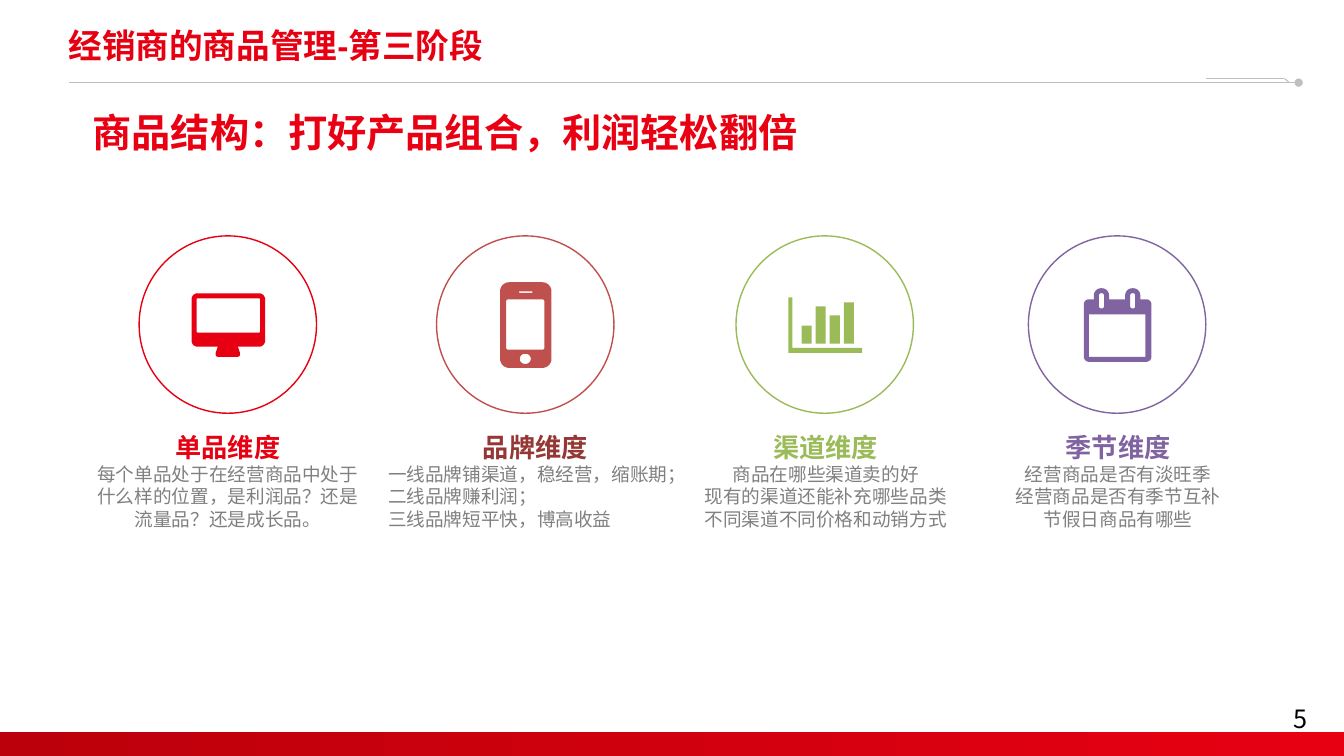
from math import hypot
from lxml.etree import SubElement
from pptx import Presentation
from pptx.dml.color import RGBColor
from pptx.enum.shapes import MSO_CONNECTOR, MSO_SHAPE
from pptx.enum.text import MSO_ANCHOR, PP_ALIGN
from pptx.oxml.ns import qn
from pptx.util import Inches, Pt

COLORS = {
    "red": "E60012", "dark_red": "BC000B", "headline": "E90012",
    "brick": "C0504D", "maroon": "953735", "green": "9BBB59",
    "purple": "8064A2", "gray": "808080", "rule": "BFBFBF",
    "white": "FFFFFF", "black": "000000",
}
RGB = {name: RGBColor.from_string(value) for name, value in COLORS.items()}
CJK = "Noto Sans CJK SC"


def add_text(box, lines, wrap=True):
    sp = s.shapes.add_textbox(*[Inches(v) for v in box])
    tf = sp.text_frame
    tf.word_wrap = wrap
    for i, (text, size, color, bold, align, font) in enumerate(lines):
        p = tf.paragraphs[0] if i == 0 else tf.add_paragraph()
        p.text = text
        p.alignment = align
        p.font.size = Pt(size)
        p.font.bold = bold
        p.font.color.rgb = RGB[color]
        p.font.name = font
        latin = next(p._p.iter(qn("a:latin")))
        SubElement(latin.getparent(), qn("a:ea"), typeface=CJK)
    return sp


def outline(corners):
    points = []
    for i, (x, y, radius) in enumerate(corners):
        if radius == 0:
            points.append((Inches(x), Inches(y)))
            continue
        ends = []
        for nx, ny, _ in (corners[i - 1], corners[(i + 1) % len(corners)]):
            k = radius / hypot(nx - x, ny - y)
            ends.append((x + (nx - x) * k, y + (ny - y) * k))
        (ax, ay), (bx, by) = ends
        for step in range(9):
            t = step / 8
            u = 1 - t
            a = u ** 3 + 1.35 * u * u * t
            b = t ** 3 + 1.35 * u * t * t
            c = 1 - a - b
            points.append((Inches(a * ax + b * bx + c * x),
                           Inches(a * ay + b * by + c * y)))
    return points


prs = Presentation()
prs.slide_width = Inches(13.33)
prs.slide_height = Inches(7.5)
s = prs.slides.add_slide(prs.slide_layouts[6])

bar = s.shapes.add_shape(MSO_SHAPE.RECTANGLE, 0, Inches(7.26), Inches(13.33), Inches(0.24))
bar.shadow.inherit = False
bar.line.fill.background()
bar.fill.gradient()
bar.fill.gradient_angle = 0
for stop, color, position in zip(bar.fill.gradient_stops, ("dark_red", "red"), (0, 1)):
    stop.color.rgb = RGB[color]
    stop.position = position

for x1, y1, x2, y2 in [(0.68, 0.82, 12.88, 0.82), (11.96, 0.78, 12.74, 0.78),
                       (12.74, 0.78, 12.78, 0.81)]:
    rule = s.shapes.add_connector(MSO_CONNECTOR.STRAIGHT, Inches(x1), Inches(y1),
                                  Inches(x2), Inches(y2))
    rule.line.color.rgb = RGB["rule"]
    rule.line.width = Pt(0.75)
    if x1 == 0.68:
        SubElement(rule.line._get_or_add_ln(), qn("a:tailEnd"), type="oval")
    SubElement(rule._element.spPr, qn("a:effectLst"))

title = add_text((0.68, 0.22, 10.08, 0.5),
                 [("经销商的商品管理-第三阶段", 24, "red", True, PP_ALIGN.LEFT, "Arial")], False)
title.text_frame.margin_left = 0
title.text_frame.vertical_anchor = MSO_ANCHOR.MIDDLE
title.text_frame.paragraphs[0].line_spacing = 0.9

headline = add_text((0.82, 1.03, 8.48, 0.57),
                    [("商品结构：打好产品组合，利润轻松翻倍", 28, "headline", True, PP_ALIGN.LEFT, CJK)])
headline.fill.solid()
headline.fill.fore_color.rgb = RGB["white"]

add_text((12.73, 6.93, 0.67, 0.4), [("5", 18, "black", False, PP_ALIGN.LEFT, CJK)])

dimensions = [
    ("单品维度", "red", "red", 1.38, 0.82, 2.88, PP_ALIGN.CENTER,
     ["每个单品处于在经营商品中处于什么样的位置，是利润品？还是流量品？还是成长品。"]),
    ("品牌维度", "maroon", "brick", 4.33, 3.75, 3.12, PP_ALIGN.LEFT,
     ["一线品牌铺渠道，稳经营，缩账期；", "二线品牌赚利润；", "三线品牌短平快，博高收益"]),
    ("渠道维度", "green", "green", 7.3, 6.73, 2.92, PP_ALIGN.CENTER,
     ["商品在哪些渠道卖的好", "现有的渠道还能补充哪些品类", "不同渠道不同价格和动销方式"]),
    ("季节维度", "purple", "purple", 10.2, 9.69, 2.8, PP_ALIGN.CENTER,
     ["经营商品是否有淡旺季", "经营商品是否有季节互补", "节假日商品有哪些"]),
]
for name, name_color, ring_color, ring_x, text_x, width, align, body in dimensions:
    lines = [(name, 18.7, name_color, True, PP_ALIGN.CENTER, CJK)]
    lines += [(text, 13.3, "gray", False, align, CJK) for text in body]
    add_text((text_x, 4.23, width, 1.09), lines)
    ring = s.shapes.add_shape(MSO_SHAPE.OVAL, Inches(ring_x), Inches(2.34),
                              Inches(1.76), Inches(1.76))
    ring.shadow.inherit = False
    ring.fill.background()
    ring.line.color.rgb = RGB[ring_color]
    ring.line.width = Pt(1)

monitor = [(1.9, 2.91, 0.06), (2.63, 2.91, 0.06), (2.63, 3.44, 0.06), (2.36, 3.44, 0),
           (2.38, 3.5, 0), (2.38, 3.54, 0.02), (2.14, 3.54, 0.02), (2.14, 3.5, 0),
           (2.16, 3.44, 0), (1.9, 3.44, 0.06)]
calendar = [(10.75, 2.97, 0.05)]
for ring_left in (10.85, 11.16):
    ring_right = ring_left + 0.15
    calendar += [(ring_left, 2.97, 0), (ring_left, 2.86, 0.07),
                 (ring_right, 2.86, 0.07), (ring_right, 2.97, 0)]
calendar += [(11.42, 2.97, 0.05), (11.42, 3.59, 0.05), (10.75, 3.59, 0.05)]
axes = [(7.82, 2.95, 0), (7.86, 2.95, 0), (7.86, 3.45, 0), (8.55, 3.45, 0),
        (8.55, 3.5, 0), (7.82, 3.5, 0)]

icons = [
    ("red", [monitor], [(1.95, 2.96, 2.58, 3.3, 0.01)]),
    ("brick", [], [(4.96, 2.8, 5.47, 3.65, 0.09), (5.02, 2.97, 5.4, 3.47, 0.02),
                   (5.15, 2.89, 5.28, 2.905, 0), (5.155, 3.51, 5.265, 3.61, 0.05)]),
    ("green", [axes], [(7.95 + 0.14 * i, top, 8.05 + 0.14 * i, 3.41, 0)
                       for i, top in enumerate((3.23, 3.04, 3.13, 3))]),
    ("purple", [calendar], [(10.8, 3.12, 11.36, 3.54, 0), (10.9, 2.91, 10.95, 3.06, 0.02),
                            (11.21, 2.91, 11.26, 3.06, 0.02)]),
]
for color, contours, boxes in icons:
    rectangles = [[(x1, y1, r), (x2, y1, r), (x2, y2, r), (x1, y2, r)]
                  for x1, y1, x2, y2, r in boxes]
    builder = None
    for contour in contours + rectangles:
        points = outline(contour)
        if builder is None:
            builder = s.shapes.build_freeform(*points[0])
        else:
            builder.move_to(*points[0])
        builder.add_line_segments(points[1:], close=True)
    icon = builder.convert_to_shape()
    icon.shadow.inherit = False
    icon.fill.solid()
    icon.fill.fore_color.rgb = RGB[color]
    icon.line.fill.background()

prs.save("out.pptx")
